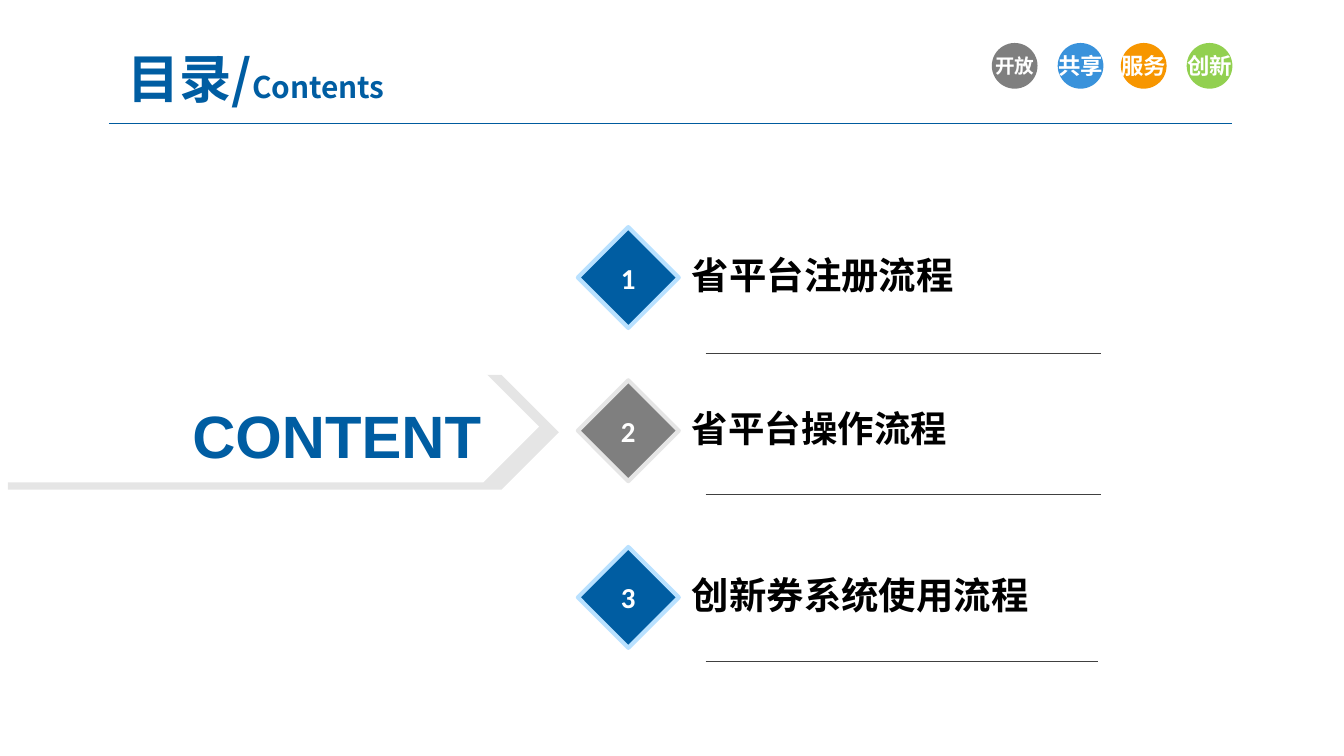
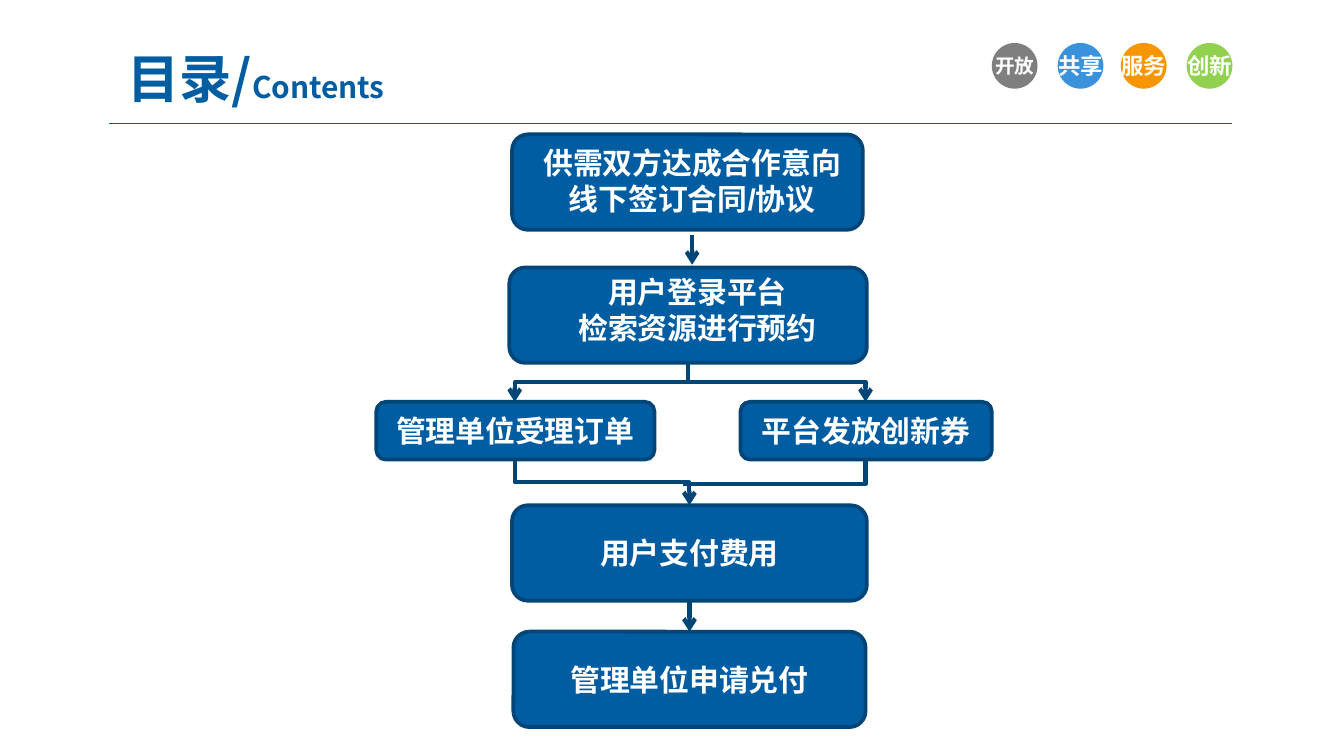
from lxml import etree
from pptx import Presentation
from pptx import util as u
from pptx.dml.color import RGBColor
from pptx.enum import shapes, text
from pptx.oxml.ns import qn

COLORS = {
    "blue": "005DA2", "rule": "005B9E", "navy": "004578", "sky": "B9E1FF",
    "gray": "7F7F7F", "silver": "E5E5E5", "dark": "404040", "black": "000000",
    "white": "FFFFFF", "azure": "3992DB", "orange": "F79600", "green": "92D050",
}
CJK = "Noto Sans CJK SC"
CENTER, RIGHT, LEFT = text.PP_ALIGN.CENTER, text.PP_ALIGN.RIGHT, text.PP_ALIGN.LEFT
MIDDLE, TOP = text.MSO_ANCHOR.MIDDLE, text.MSO_ANCHOR.TOP
PRESET, LINK = shapes.MSO_SHAPE, shapes.MSO_CONNECTOR


def rgb(name):
    return RGBColor.from_string(COLORS[name])


def inches(*lengths):
    return [u.Inches(length) for length in lengths]


def apply(target, formats):
    for attribute, value in formats.items():
        setattr(target, attribute, value)


def write(holder, lines, size, color, font="Calibri", align=CENTER,
          anchor=MIDDLE, wrap=True, spacing=None):
    frame = holder.text_frame
    apply(frame, {"word_wrap": wrap, "vertical_anchor": anchor})
    for index, line in enumerate(lines):
        paragraph = frame.paragraphs[0] if index == 0 else frame.add_paragraph()
        apply(paragraph, {"alignment": align, "line_spacing": spacing})
        for words, points in (line if isinstance(line, list) else [(line, size)]):
            run = paragraph.add_run()
            run.text = words
            run.font.color.rgb = rgb(color)
            apply(run.font, {"size": u.Pt(points), "bold": True, "name": font})
            etree.SubElement(run.font._element, qn("a:ea"), typeface=CJK)


def label(slide, box, lines, size, color, **formats):
    write(slide.shapes.add_textbox(*inches(*box)), lines, size, color, **formats)


def block(slide, preset, box, fill, outline=None, width=1):
    shape = slide.shapes.add_shape(preset, *inches(*box))
    shape.shadow.inherit = False
    shape.fill.solid()
    shape.fill.fore_color.rgb = rgb(fill)
    if outline:
        shape.line.color.rgb = rgb(outline)
        shape.line.width = u.Pt(width)
    else:
        shape.line.fill.background()
    return shape


def line(slide, start, end, color, width, arrow=False, kind=LINK.STRAIGHT):
    connector = slide.shapes.add_connector(kind, *inches(*start, *end))
    connector.line.color.rgb = rgb(color)
    connector.line.width = u.Pt(width)
    properties = connector._element.spPr
    if arrow:
        etree.SubElement(properties.find(qn("a:ln")), qn("a:tailEnd"), type="arrow")
    etree.SubElement(properties, qn("a:effectLst"))
    return connector


def elbow(slide, start, end, bends, arrow=True, down_first=True):
    (x1, y1), (x2, y2) = start, end
    if down_first:
        mid_x, mid_y = (x1 + x2) / 2, (y1 + y2) / 2
        half_w, half_h = (y2 - y1) / 2, (x1 - x2) / 2
        start = (mid_x - half_w, mid_y - half_h)
        end = (mid_x + half_w, mid_y + half_h)
    connector = line(slide, start, end, "navy", 2.25, arrow, LINK.ELBOW)
    properties = connector._element.spPr
    properties.find(qn("a:prstGeom")).set("prst", f"bentConnector{bends + 1}")
    if down_first:
        properties.find(qn("a:xfrm")).set("rot", str(90 * 60000))


def header(slide, x, y):
    label(slide, (x, y, 2.47, 0.54), [[("目录/", 28), ("Contents", 16)]], 28, "blue", font=CJK)
    line(slide, (x + 0.14, y + 0.61), (x + 8.5, y + 0.61), "rule", 0.75)
    values = [("开放", "gray", 6.71, 10.5), ("共享", "azure", 7.2, 12),
              ("服务", "orange", 7.67, 12), ("创新", "green", 8.16, 12)]
    for word, fill, offset, size in values:
        badge = block(slide, PRESET.OVAL, (x + offset, y + 0.01, 0.34, 0.34), fill)
        write(badge, [word], size, "white", wrap=False)


def content_banner(slide, x, y):
    banner = block(slide, PRESET.PENTAGON, (x, y, 3.98, 0.83), "white")
    effects = banner._element.spPr.find(qn("a:effectLst"))
    shadow = etree.SubElement(effects, qn("a:outerShdw"), dist="38100", dir="2700000",
                              sx="103000", sy="103000", algn="tl", rotWithShape="0")
    tint = etree.SubElement(shadow, qn("a:srgbClr"), val=COLORS["black"])
    etree.SubElement(tint, qn("a:alpha"), val="10000")
    label(slide, (x + 0.64, y + 0.16, 3.01, 0.64), ["CONTENT"], 32, "blue",
          font="Arial", align=RIGHT, anchor=TOP)


def agenda(slide, x, y):
    chapters = [("省平台注册流程", 20, 0, 0.94, 2.94, "blue", "sky"),
                ("省平台操作流程", 19.5, 1.14, 1.99, 2.94, "gray", "silver"),
                ("创新券系统使用流程", 20, 2.38, 3.23, 2.92, "blue", "sky")]
    for number, (name, size, top, rule, length, fill, edge) in enumerate(chapters, 1):
        marker = block(slide, PRESET.DIAMOND, (x, y + top, 0.75, 0.75), fill, edge, 2.25)
        write(marker, [str(number)], 15.5, "white")
        label(slide, (x + 0.75, y + top + 0.15, 3.16, 0.45), [name], size, "black",
              font="Arial", align=LEFT, spacing=0.9)
        line(slide, (x + 0.95, y + rule), (x + 0.95 + length, y + rule), "dark", 0.25)


def voucher_flow(slide, x, y):
    def at(across, down):
        return x + across, y + down

    def step(across, down, width, height, words=None):
        box = block(slide, PRESET.ROUNDED_RECTANGLE, (*at(across, down), width, height),
                    "blue", "navy", 2)
        if words:
            write(box, [words], 16, "white", font="Arial")
        return box

    def caption(across, down, width, lines):
        label(slide, (*at(across, down), width, 0.64), lines, 16, "white",
              font="Arial", anchor=TOP, wrap=False)

    step(1.01, 0, 2.61, 0.71)
    caption(1.14, 0.03, 2.42, ["供需双方达成合作意向", "线下签订合同/协议"])
    step(0.99, 0.99, 2.66, 0.71)
    caption(1.4, 0.99, 1.98, ["用户登录平台", "检索资源进行预约"])
    step(2.71, 1.99, 1.87, 0.43, "平台发放创新券")
    step(0, 1.99, 2.07, 0.43, "管理单位受理订单")
    payment = step(1.01, 2.76, 2.64, 0.71, "用户支付费用")
    redemption = step(1.02, 3.7, 2.62, 0.71, "管理单位申请兑付")

    elbow(slide, at(2.32, 1.7), at(1.03, 1.99), 2)
    elbow(slide, at(2.32, 1.84), at(3.64, 1.99), 1, down_first=False)
    elbow(slide, at(1.03, 2.42), at(2.33, 2.76), 2)
    elbow(slide, at(3.64, 2.42), at(2.28, 2.6), 1, arrow=False)
    line(slide, at(2.35, 0.75), at(2.35, 0.97), "navy", 2.25, arrow=True)
    payout = line(slide, at(2.33, 3.47), at(2.33, 3.7), "navy", 2.25, arrow=True)
    payout.begin_connect(payment, 2)
    payout.end_connect(redemption, 0)


def new_slide(deck):
    slide = deck.slides.add_slide(deck.slide_layouts[6])
    header(slide, 0.67, 0.31)
    return slide


def main():
    deck = Presentation()
    apply(deck, {"slide_width": u.Inches(10), "slide_height": u.Inches(10 * 9 / 16)})
    contents = new_slide(deck)
    content_banner(contents, 0.03, 2.76)
    agenda(contents, 4.3, 1.69)
    voucher_flow(new_slide(deck), 2.8, 1)
    deck.save("out.pptx")


if __name__ == "__main__":
    main()
